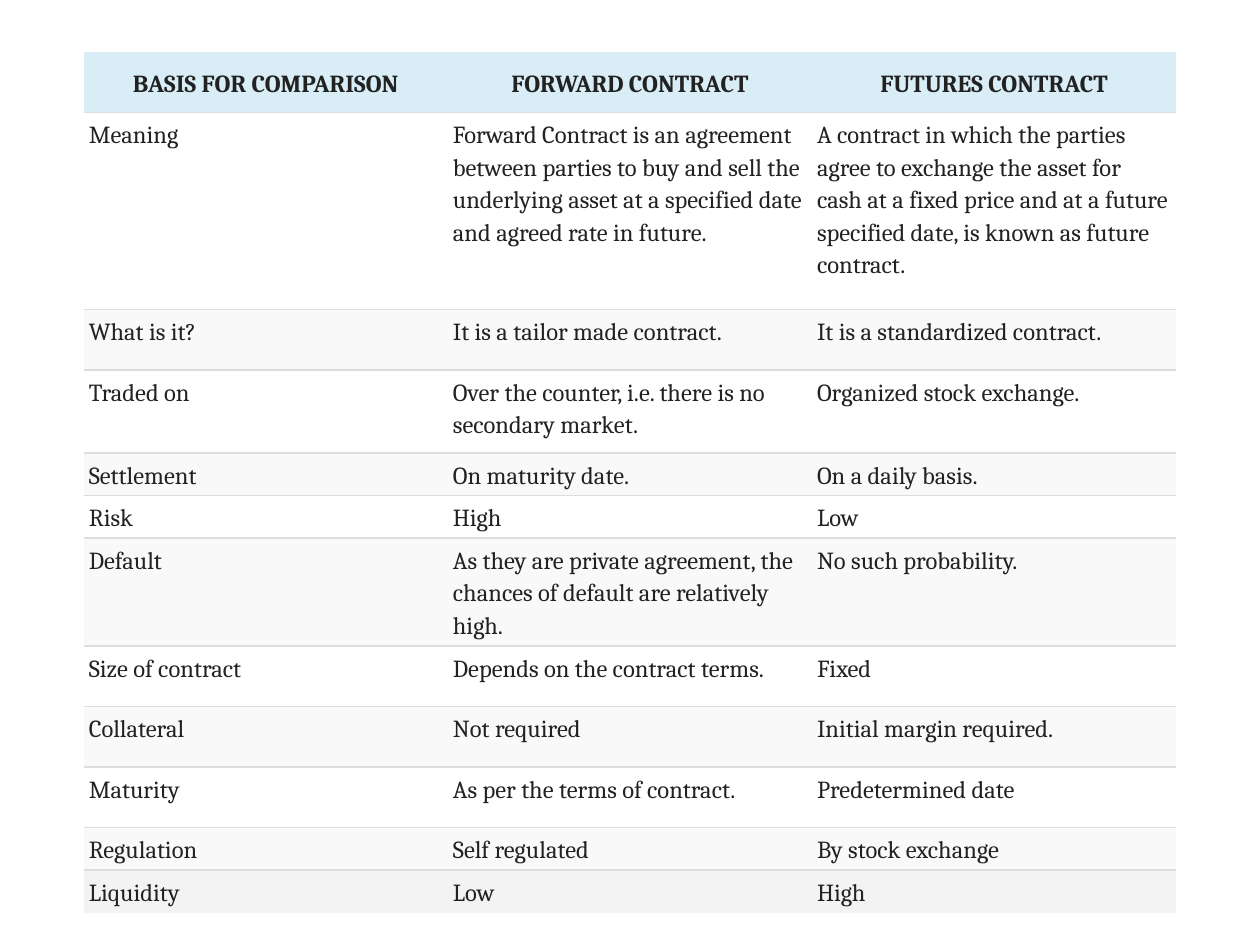
"""Build a slide with a table comparing forward and futures contracts."""
from lxml.etree import SubElement
from pptx import Presentation
from pptx.dml.color import RGBColor
from pptx.enum.text import MSO_ANCHOR, PP_ALIGN
from pptx.oxml.ns import qn
from pptx.util import Cm, Pt

COLORS = {"text": "222222", "line": "DDDDDD", "head": "D9EDF7",
          "odd": "FFFFFF", "even": "F9F9F9", "last": "F3F3F3"}
ROWS = [
    (1.22, "BASIS FOR COMPARISON", "FORWARD CONTRACT", "FUTURES CONTRACT"),
    (3.97, "Meaning",
     "Forward Contract is an agreement between parties to buy and sell the "
     "underlying asset at a specified date and agreed rate in future.",
     "A contract in which the parties agree to exchange the asset for cash at a "
     "fixed price and at a future specified date, is known as future contract."),
    (1.22, "What is it?", "It is a tailor made contract.",
     "It is a standardized contract."),
    (1.67, "Traded on", "Over the counter, i.e. there is no secondary market.",
     "Organized stock exchange."),
    (0.86, "Settlement", "On maturity date.", "On a daily basis."),
    (0.86, "Risk", "High", "Low"),
    (2.17, "Default",
     "As they are private agreement, the chances of default are relatively high.",
     "No such probability."),
    (1.22, "Size of contract", "Depends on the contract terms.", "Fixed"),
    (1.22, "Collateral", "Not required", "Initial margin required."),
    (1.22, "Maturity", "As per the terms of contract.", "Predetermined date"),
    (0.86, "Regulation", "Self regulated", "By stock exchange"),
    (0.86, "Liquidity", "Low", "High"),
]
LAST = len(ROWS) - 1
LEFT, TOP, WIDTH, PAD = 1.69, 1.05, 7.34, 0.1


def tint(row):
    if row == 0:
        return COLORS["head"]
    if row == LAST:
        return COLORS["last"]
    return COLORS["odd" if row % 2 else "even"]


def add_edges(cell, row):
    drawn = {"T": row > 0, "B": row < LAST}
    props = cell._tc.get_or_add_tcPr()
    for side in "LRTB":
        edge = SubElement(props, qn(f"a:ln{side}"), w=str(Pt(1)))
        if drawn.get(side):
            fill = SubElement(edge, qn("a:solidFill"))
            SubElement(fill, qn("a:srgbClr"), val=COLORS["line"])
        else:
            SubElement(edge, qn("a:noFill"))


def fill_cell(cell, text, row):
    head = row == 0
    add_edges(cell, row)
    cell.fill.solid()
    cell.fill.fore_color.rgb = RGBColor.from_string(tint(row))
    cell.margin_left = cell.margin_right = Cm(PAD)
    cell.margin_top = cell.margin_bottom = Cm(PAD)
    cell.vertical_anchor = MSO_ANCHOR.MIDDLE if head else MSO_ANCHOR.TOP
    para = cell.text_frame.paragraphs[0]
    para.text = text
    para.alignment = PP_ALIGN.CENTER if head else PP_ALIGN.LEFT
    para.line_spacing = 1.15
    para.space_after = Pt(12)
    font = para.runs[0].font
    font.name, font.size, font.bold = "Cambria", Pt(14), head
    font.color.rgb = RGBColor.from_string(COLORS["text"])


def main():
    deck = Presentation()
    deck.slide_width, deck.slide_height = Cm(25.4), Cm(19.05)
    slide = deck.slides.add_slide(deck.slide_layouts[6])
    count = len(ROWS[0]) - 1
    height = sum(row[0] for row in ROWS)
    table = slide.shapes.add_table(len(ROWS), count, Cm(LEFT), Cm(TOP),
                                   Cm(WIDTH * count), Cm(height)).table
    for col in table.columns:
        col.width = Cm(WIDTH)
    for row, (tall, *texts) in enumerate(ROWS):
        table.rows[row].height = Cm(tall)
        for col, text in enumerate(texts):
            fill_cell(table.cell(row, col), text, row)
    deck.save("out.pptx")


if __name__ == "__main__":
    main()
